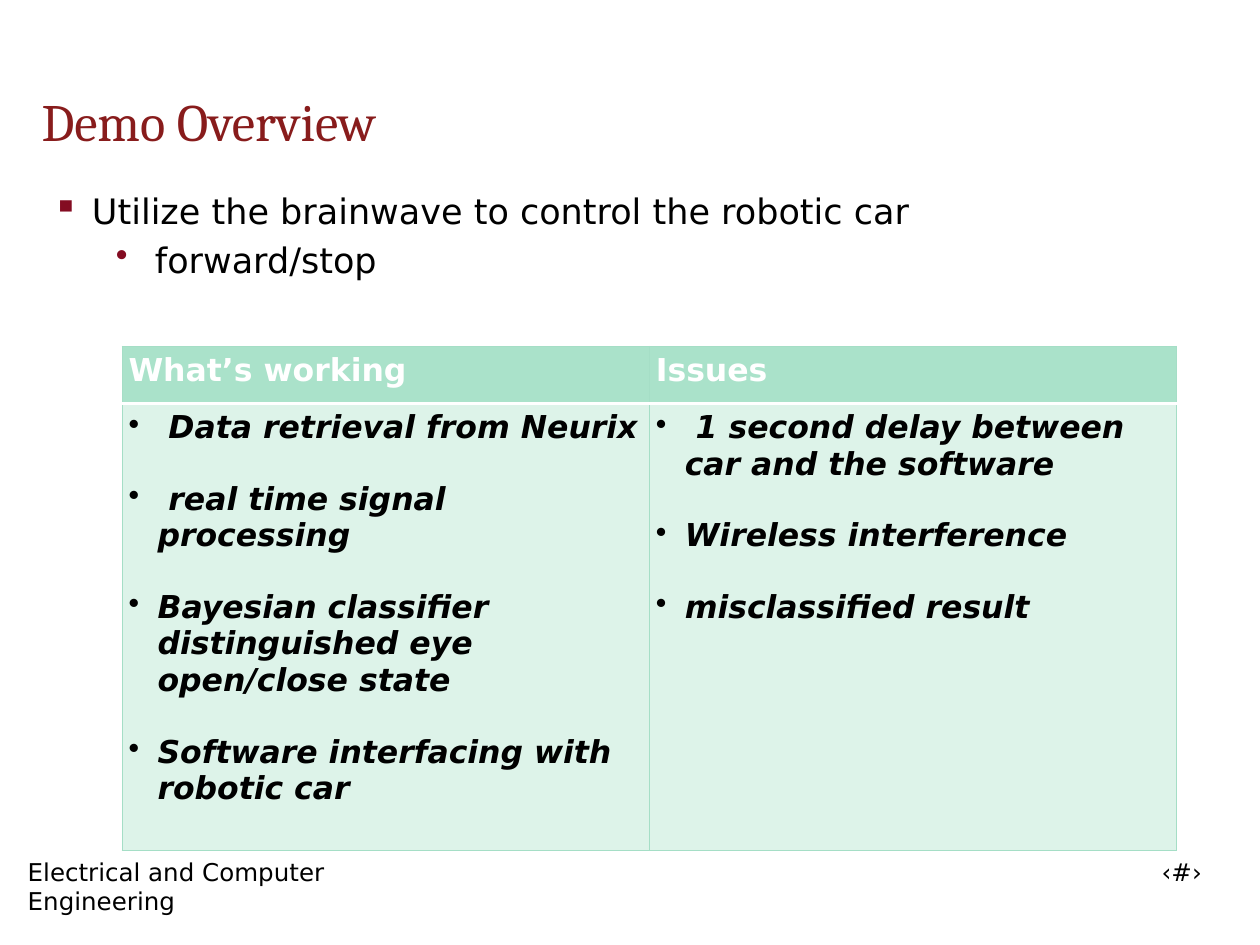
from dataclasses import dataclass

from lxml import etree
from pptx import Presentation
from pptx.dml.color import RGBColor
from pptx.enum.text import MSO_ANCHOR
from pptx.oxml.ns import qn
from pptx.util import Inches, Pt

MIDDLE, TOP = MSO_ANCHOR.MIDDLE, MSO_ANCHOR.TOP


@dataclass(frozen=True)
class Theme:
    head: str = "Cambria"
    body: str = "DejaVu Sans"
    black: str = "000000"
    white: str = "FFFFFF"
    title: str = "881C1C"
    mark: str = "840C22"
    mint: str = "AAE2CA"
    edge: str = "A5DEC6"
    big: int = 30
    lead: int = 20
    cell: int = 18
    foot: int = 14


THEME = Theme()
PAD = 0.05
COLS = [
    ("What’s working", [
        " Data retrieval from Neurix",
        " real time signal processing",
        "Bayesian classifier distinguished eye open/close state",
        "Software interfacing with robotic car",
    ]),
    ("Issues", [
        " 1 second delay between car and the software",
        "Wireless interference",
        "misclassified result",
    ]),
]


def add_mark(para, char, left, hang, color):
    """Give a paragraph a hanging bullet."""
    props = para._p.get_or_add_pPr()
    props.set("marL", str(Inches(left)))
    props.set("indent", str(-Inches(hang)))
    tint = etree.SubElement(props, qn("a:buClr"))
    etree.SubElement(tint, qn("a:srgbClr"), val=color)
    etree.SubElement(props, qn("a:buChar"), char=char)


def write(frame, text, index=0, font=THEME.body, size=THEME.cell,
          color=THEME.black, bold=False, italic=False, before=0, mark=None):
    para = frame.add_paragraph() if index else frame.paragraphs[0]
    if index and before:
        para.space_before = Pt(before)
    if mark:
        add_mark(para, *mark)
    run = para.add_run()
    run.text = text
    run.font.name = font
    run.font.size = Pt(size)
    run.font.bold = bold
    run.font.italic = italic
    run.font.color.rgb = RGBColor.from_string(color)


def set_pad(item, pad):
    item.margin_left = item.margin_right = Inches(pad)
    item.margin_top = item.margin_bottom = Inches(pad)


def add_box(slide, left, top, width, height, pad=0, anchor=TOP):
    box = slide.shapes.add_textbox(
        Inches(left), Inches(top), Inches(width), Inches(height))
    frame = box.text_frame
    frame.word_wrap = True
    frame.vertical_anchor = anchor
    set_pad(frame, pad)
    return frame


def add_edges(cell, **rule):
    """Draw all four borders; rule maps a side to its (colour, points)."""
    props = cell._tc.get_or_add_tcPr()
    for spot, side in enumerate("LRTB"):
        color, width = rule.get(side, (THEME.edge, 0.75))
        line = etree.Element(qn("a:ln" + side), w=str(Pt(width)))
        fill = etree.SubElement(line, qn("a:solidFill"))
        etree.SubElement(fill, qn("a:srgbClr"), val=color)
        props.insert(spot, line)


def paint(cell, color, alpha=100):
    cell.fill.solid()
    cell.fill.fore_color.rgb = RGBColor.from_string(color)
    if alpha < 100:
        tint = cell._tc.tcPr.find(".//" + qn("a:srgbClr"))
        etree.SubElement(tint, qn("a:alpha"), val=str(alpha * 1000))


def add_grid(slide):
    rows = [0.45, 3.55]
    table = slide.shapes.add_table(
        2, len(COLS), Inches(0.97), Inches(2.75),
        Inches(8.37), Inches(sum(rows))).table
    table.first_row = table.horz_banding = False
    for row, height in zip(table.rows, rows):
        row.height = Inches(height)
    rule = (THEME.white, 2)
    for col, (name, items) in enumerate(COLS):
        head, body = table.cell(0, col), table.cell(1, col)
        for cell in (head, body):
            set_pad(cell, PAD)
        paint(head, THEME.mint)
        paint(body, THEME.mint, alpha=40)
        add_edges(head, B=rule)
        add_edges(body, T=rule)
        write(head.text_frame, name, color=THEME.white, bold=True)
        for i, item in enumerate(items):
            write(body.text_frame, item, i, bold=True, italic=True,
                  before=20, mark=("•", 0.23, 0.23, THEME.black))


def main():
    deck = Presentation()
    deck.slide_width, deck.slide_height = Inches(10), Inches(7.5)
    slide = deck.slides.add_slide(deck.slide_layouts[6])

    write(add_box(slide, 9.17, 6.75, 0.67, 0.34, PAD), "‹#›",
          size=THEME.foot)
    write(add_box(slide, 0.17, 6.75, 3.65, 0.33, PAD),
          "Electrical and Computer Engineering", size=THEME.foot)
    write(add_box(slide, 0.33, 0.67, 9.67, 0.58, anchor=MIDDLE),
          "Demo Overview", font=THEME.head, size=THEME.big,
          color=THEME.title)

    body = add_box(slide, 0.42, 1.5, 8.92, 4.92)
    points = [("Utilize the brainwave to control the robotic car", "▪", 0.31),
              ("forward/stop", "•", 0.81)]
    for i, (text, char, left) in enumerate(points):
        write(body, text, i, size=THEME.lead, before=4,
              mark=(char, left, 0.31, THEME.mark))
    add_grid(slide)
    deck.save("out.pptx")


if __name__ == "__main__":
    main()
